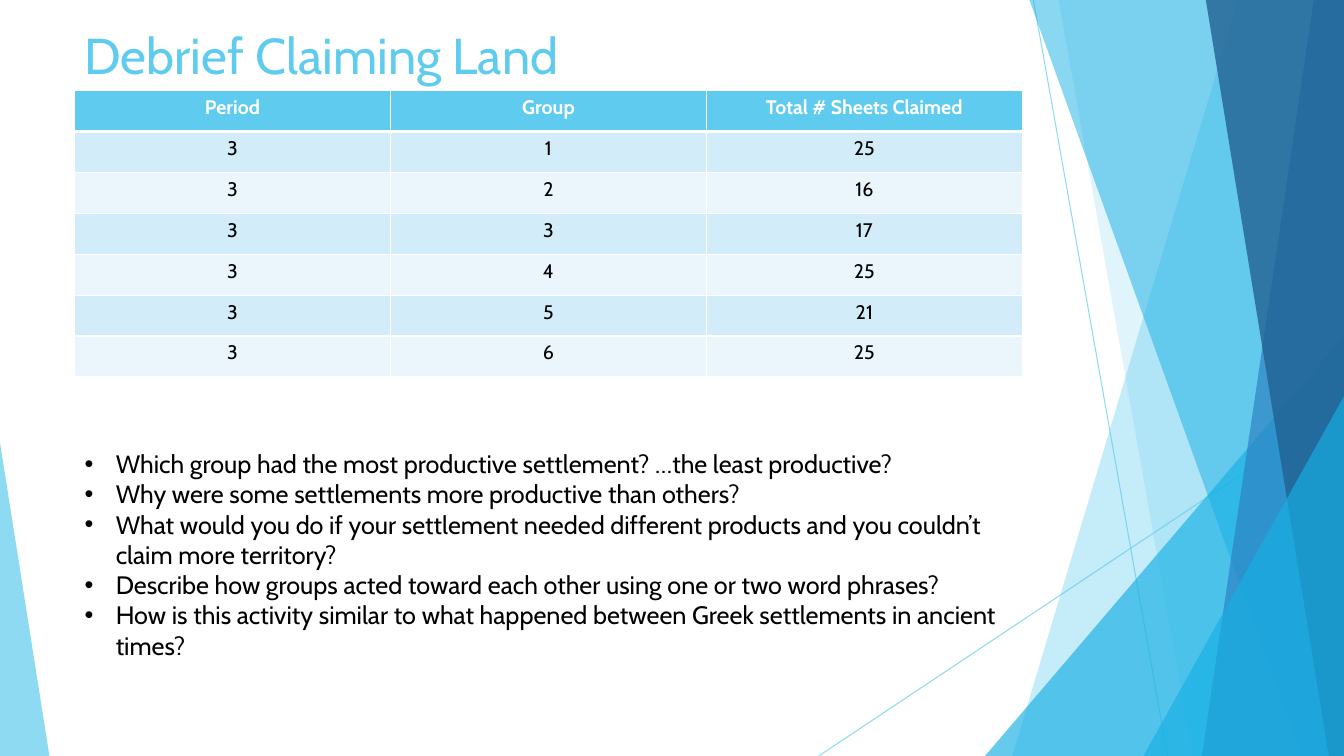
from lxml.etree import SubElement as Sub
from pptx import Presentation
from pptx.dml.color import RGBColor
from pptx.enum.shapes import MSO_CONNECTOR as Conn, MSO_SHAPE as Shape
from pptx.enum.text import MSO_ANCHOR as Anchor, PP_ALIGN as Align
from pptx.oxml.ns import qn
from pptx.util import Inches, Pt

FONT = "Cabin"
SKY, CYAN, BLUE, NAVY = "5FCBEF", "17B0E4", "2E83C3", "226292"
WHITE, BLACK = "FFFFFF", "000000"
STRIPES = ["D2ECF9", "EAF6FC"]

# Grid of 0.1 inch cells
COLS, ROWS = 133.3, 75
LEFT, SPAN = 7.4, 94

HEADS = ["Period", "Group", "Total # Sheets Claimed"]
SHEETS = [25, 16, 17, 25, 21, 25]
ASKS = [
    "Which group had the most productive settlement? …the least productive?",
    "Why were some settlements more productive than others?",
    "What would you do if your settlement needed different products "
    "and you couldn’t claim more territory?",
    "Describe how groups acted toward each other using one or two word phrases?",
    "How is this activity similar to what happened between Greek settlements "
    "in ancient times?",
]


def unit(*cells):
    return [Inches(c / 10) for c in cells]


def color(code):
    return RGBColor.from_string(code)


def fade(fill, share):
    tint = fill._xPr.find(qn("a:solidFill"))[0]
    Sub(tint, qn("a:alpha"), val=str(share * 1000))


def paint(shape, code, share):
    shape.shadow.inherit = False
    shape.fill.solid()
    shape.fill.fore_color.rgb = color(code)
    fade(shape.fill, share)
    shape.line.fill.background()


def ray(slide, x1, y1, x2, y2):
    line = slide.shapes.add_connector(Conn.STRAIGHT, *unit(x1, y1, x2, y2))
    line.line.color.rgb = color(SKY)
    line.line.width = Pt(0.75)
    fade(line.line.fill, 70)
    Sub(line._element.spPr, qn("a:effectLst"))


def band(slide, top, base, code, share):
    """Fill from a slanted left edge to the slide's right side."""
    path = slide.shapes.build_freeform(*unit(top, 0))
    path.add_line_segments([unit(COLS, 0), unit(COLS, ROWS), unit(base, ROWS)])
    paint(path.convert_to_shape(), code, share)


def wedge(slide, left, top, wide, peak, code, share):
    """Triangle that stands on the slide's bottom edge."""
    box = unit(left, top, wide, ROWS - top)
    shape = slide.shapes.add_shape(Shape.ISOSCELES_TRIANGLE, *box)
    shape.adjustments[0] = peak
    paint(shape, code, share)


def style(para, size, code, bold=False):
    font = para.font
    font.name, font.size, font.bold = FONT, Pt(size), bold
    font.color.rgb = color(code)


def text(slide, top, high, lines, size, code, bullet=False):
    frame = slide.shapes.add_textbox(*unit(LEFT, top, SPAN, high)).text_frame
    frame.word_wrap = True
    frame.vertical_anchor = Anchor.TOP if bullet else Anchor.MIDDLE
    frame.text = "\n".join(lines)
    for para in frame.paragraphs:
        style(para, size, code)
        if bullet:
            props = para._p.get_or_add_pPr()
            props.set("marL", str(Inches(0.31)))
            props.set("indent", str(-Inches(0.31)))
            mark = props.find(qn("a:defRPr"))
            face = Sub(props, qn("a:buFont"), typeface="Arial")
            dot = Sub(props, qn("a:buChar"), char="•")
            if mark is not None:
                mark.addprevious(face)
                mark.addprevious(dot)


def edge(cell, thick):
    props = cell._tc.get_or_add_tcPr()
    for side, width in zip("LRTB", [1, 1, *thick]):
        line = Sub(props, qn(f"a:ln{side}"), w=str(Pt(width)))
        Sub(Sub(line, qn("a:solidFill")), qn("a:srgbClr"), val=WHITE)


def table(slide, top, high, rows):
    box = unit(LEFT, top, SPAN, high)
    grid = slide.shapes.add_table(len(rows), len(rows[0]), *box).table
    for r, row in enumerate(rows):
        head = r == 0
        thick = (1, 3) if head else (3 if r == 1 else 1, 1)
        for c, word in enumerate(row):
            cell = grid.cell(r, c)
            cell.text = str(word)
            edge(cell, thick)
            cell.fill.solid()
            cell.fill.fore_color.rgb = color(SKY if head else STRIPES[(r - 1) % 2])
            para = cell.text_frame.paragraphs[0]
            para.alignment = Align.CENTER
            style(para, 14, WHITE if head else BLACK, head)


def main():
    deck = Presentation()
    deck.slide_width, deck.slide_height = unit(COLS, ROWS)
    slide = deck.slides.add_slide(deck.slide_layouts[6])

    # Faceted backdrop, back to front
    ray(slide, 102.5, 0, 115.8, ROWS)
    ray(slide, COLS, 40.3, 81.2, ROWS)
    band(slide, 122.8, 100.4, SKY, 36)
    band(slide, 105, 118.3, SKY, 20)
    wedge(slide, 97.7, 33.3, 35.6, 1, CYAN, 66)
    band(slide, 102.1, 129.1, CYAN, 50)
    band(slide, 130.3, 119.2, BLUE, 70)
    band(slide, 119.6, 131.8, NAVY, 80)
    wedge(slide, 113.4, 39.3, 19.9, 1, CYAN, 66)
    wedge(slide, 0, 43.9, 4.9, 0, SKY, 70)

    # Title, results and questions
    text(slide, 1.8, 7.1, ["Debrief Claiming Land"], 36, SKY)
    rows = [[3, group, total] for group, total in enumerate(SHEETS, 1)]
    table(slide, 9, 28.4, [HEADS, *rows])
    text(slide, 44, 22.2, ASKS, 18, BLACK, bullet=True)

    deck.save("out.pptx")


if __name__ == "__main__":
    main()
